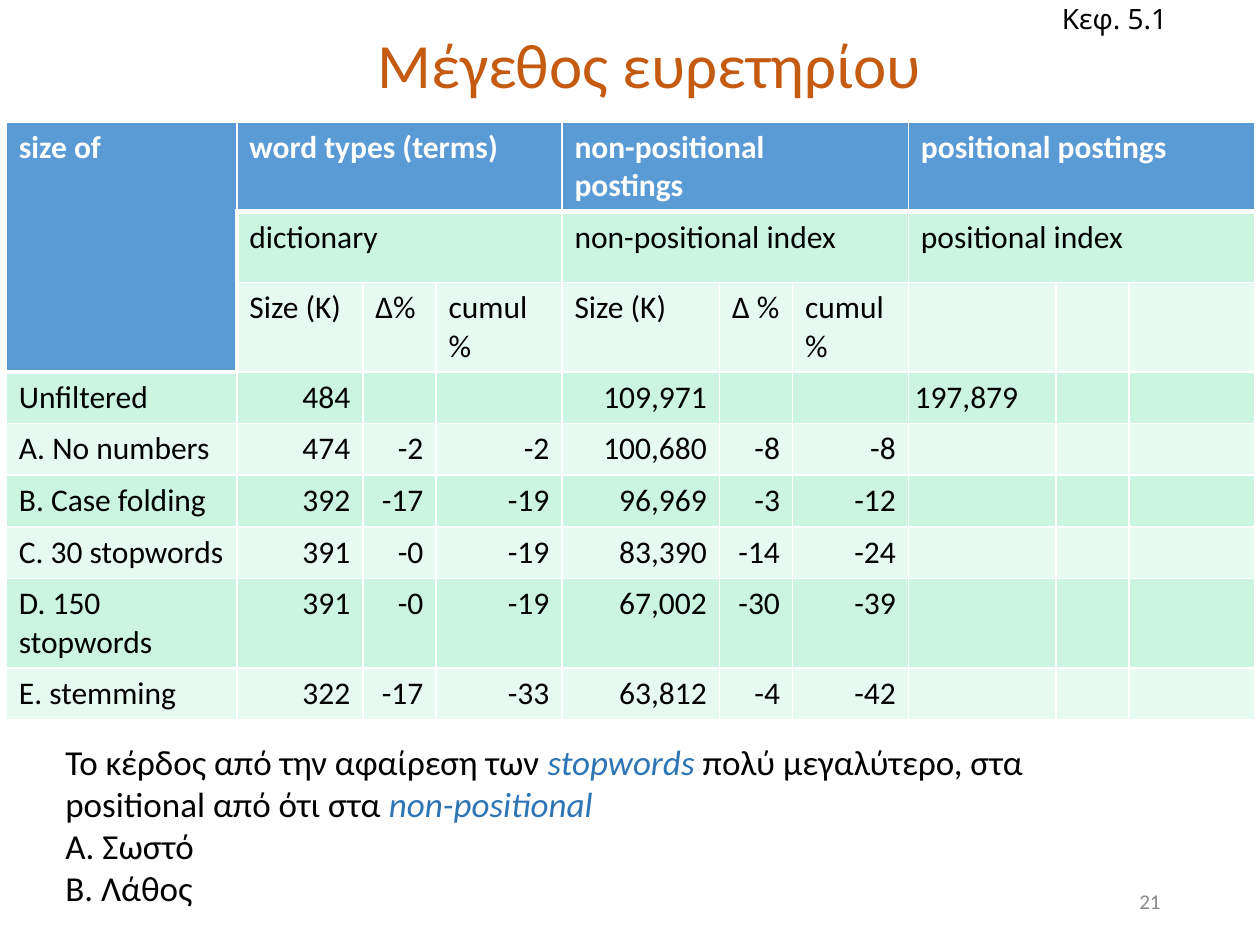
from typing import NamedTuple

from lxml import etree
from pptx import Presentation
from pptx.dml.color import RGBColor
from pptx.enum.text import MSO_ANCHOR, MSO_AUTO_SIZE, PP_ALIGN
from pptx.oxml.ns import qn
from pptx.util import Inches, Pt

LEFT, MID, RIGHT = PP_ALIGN.LEFT, PP_ALIGN.CENTER, PP_ALIGN.RIGHT
TOP, CENTER = MSO_ANCHOR.TOP, MSO_ANCHOR.MIDDLE
GROW, FIXED = MSO_AUTO_SIZE.SHAPE_TO_FIT_TEXT, MSO_AUTO_SIZE.NONE
BLACK, WHITE, BLUE, LINK = "000000", "FFFFFF", "5B9BD5", "2E75B6"
BANDS = ("E7FAF1", "CBF5E1")

COLS = (1.83, 1, 0.58, 1, 1.25, 0.58, 0.92, 1.17, 0.58, 1)
ROWS = (0.67, 0.56, 0.43) + (0.41,) * 6
GROUPS = (1, 4, 7)
HEADS = (
    ("size of", "word types (terms)", "", "", "non-positional\npostings", "", "",
     "positional postings"),
    ("", "dictionary", "", "", "non-positional index", "", "", "positional index"),
    ("", "Size (K)", "∆%", "cumul %", "Size (K)", "∆ %", "cumul %"),
)
DATA = (
    ("Unfiltered", "484", "", "", "109,971"),
    ("Α. No numbers", "474", "-2", "-2", "100,680", "-8", "-8"),
    ("Β. Case folding", "392", "-17", "-19", "96,969", "-3", "-12"),
    ("C. 30 stopwords", "391", "-0", "-19", "83,390", "-14", "-24"),
    ("D. 150 stopwords", "391", "-0", "-19", "67,002", "-30", "-39"),
    ("E. stemming", "322", "-17", "-33", "63,812", "-4", "-42"),
)


class Span(NamedTuple):
    text: str
    link: bool = False


class Label(NamedTuple):
    box: tuple
    lines: tuple
    size: int
    font: str = "Calibri"
    color: str = BLACK
    align: PP_ALIGN = LEFT
    anchor: MSO_ANCHOR = TOP
    wrap: bool = True
    fit: MSO_AUTO_SIZE = GROW


LABELS = (
    Label((7.06, 6.95, 2.25, 0.4), ((Span("21"),),), 12, color="898989",
          align=RIGHT, anchor=CENTER, fit=FIXED),
    Label((8.33, -0.04, 1.1, 0.37), ((Span("Κεφ. 5.1"),),), 16, "Noto Sans",
          anchor=CENTER, wrap=False),
    Label((7.15, 2.94, 1.03, 0.4), ((Span("197,879"),),), 18, align=RIGHT, wrap=False),
    Label((0.42, 5.83, 8.81, 1.45), (
        (Span("Το κέρδος από την αφαίρεση των "), Span("stopwords ", True),
         Span("πολύ μεγαλύτερο, στα positional από ότι στα "),
         Span("non-positional", True)),
        (Span("Α. Σωστό"),),
        (Span("Β. Λάθος"),),
    ), 20),
)


def paint(target, color: str) -> None:
    target.rgb = RGBColor.from_string(color)


def style(para, size: int, color: str, align: PP_ALIGN = LEFT,
          font: str = "Calibri", bold: bool = False) -> None:
    para.alignment = align
    para.font.size = Pt(size)
    para.font.name = font
    para.font.bold = bold
    paint(para.font.color, color)


def place(shape, box: tuple) -> None:
    shape.left, shape.top, shape.width, shape.height = map(Inches, box)


def add_title(slide) -> None:
    title = slide.shapes.title
    place(title, (0.57, 0, 9.17, 1.08))
    frame = title.text_frame
    frame.text = "Μέγεθος ευρετηρίου"
    frame.vertical_anchor = CENTER
    para = frame.paragraphs[0]
    style(para, 36, "C55A11", MID)
    para.line_spacing = 0.9


def add_label(slide, label: Label) -> None:
    shape = slide.shapes.add_textbox(*map(Inches, label.box))
    frame = shape.text_frame
    frame.word_wrap = label.wrap
    frame.auto_size = label.fit
    frame.vertical_anchor = label.anchor
    for num, spans in enumerate(label.lines):
        para = frame.add_paragraph() if num else frame.paragraphs[0]
        style(para, label.size, label.color, label.align, label.font)
        for span in spans:
            run = para.add_run()
            run.text = span.text
            if span.link:
                run.font.italic = True
                paint(run.font.color, LINK)


def add_edge(cell, side: str, width: int) -> None:
    props = cell._tc.get_or_add_tcPr()
    line = etree.SubElement(props, qn(f"a:ln{side}"), w=str(Pt(width)))
    fill = etree.SubElement(line, qn("a:solidFill"))
    etree.SubElement(fill, qn("a:srgbClr"), val=WHITE)


def add_edges(cell, row: int, col: int) -> None:
    thick = {
        "L": col == 1 and row in (1, 2),
        "R": col == 0 and row in (1, 2),
        "T": row == 1 or (row, col) == (3, 0),
        "B": row == 0 or (row, col) == (2, 0),
    }
    for side, wide in thick.items():
        add_edge(cell, side, 3 if wide else 1)


def add_grid(slide) -> None:
    frame = slide.shapes.add_table(
        len(ROWS), len(COLS), Inches(0.05), Inches(0.97),
        Inches(sum(COLS)), Inches(sum(ROWS)))
    grid = frame.table
    for col, width in zip(grid.columns, COLS):
        col.width = Inches(width)
    for row, height in zip(grid.rows, ROWS):
        row.height = Inches(height)
    grid.cell(0, 0).merge(grid.cell(2, 0))
    for row in (0, 1):
        for col in GROUPS:
            grid.cell(row, col).merge(grid.cell(row, col + 2))
    for row, texts in enumerate(HEADS + DATA):
        for col in range(len(COLS)):
            cell = grid.cell(row, col)
            head = row == 0 or (col == 0 and row < len(HEADS))
            add_edges(cell, row, col)
            cell.fill.solid()
            paint(cell.fill.fore_color, BLUE if head else BANDS[row % 2])
            cell.text = texts[col] if col < len(texts) else ""
            align = RIGHT if col and row >= len(HEADS) else LEFT
            for para in cell.text_frame.paragraphs:
                style(para, 18, WHITE if head else BLACK, align, bold=head)


def main() -> None:
    deck = Presentation()
    deck.slide_width, deck.slide_height = Inches(10), Inches(7.5)
    slide = deck.slides.add_slide(deck.slide_layouts[5])
    add_title(slide)
    add_grid(slide)
    for label in LABELS:
        add_label(slide, label)
    deck.save("out.pptx")


if __name__ == "__main__":
    main()
